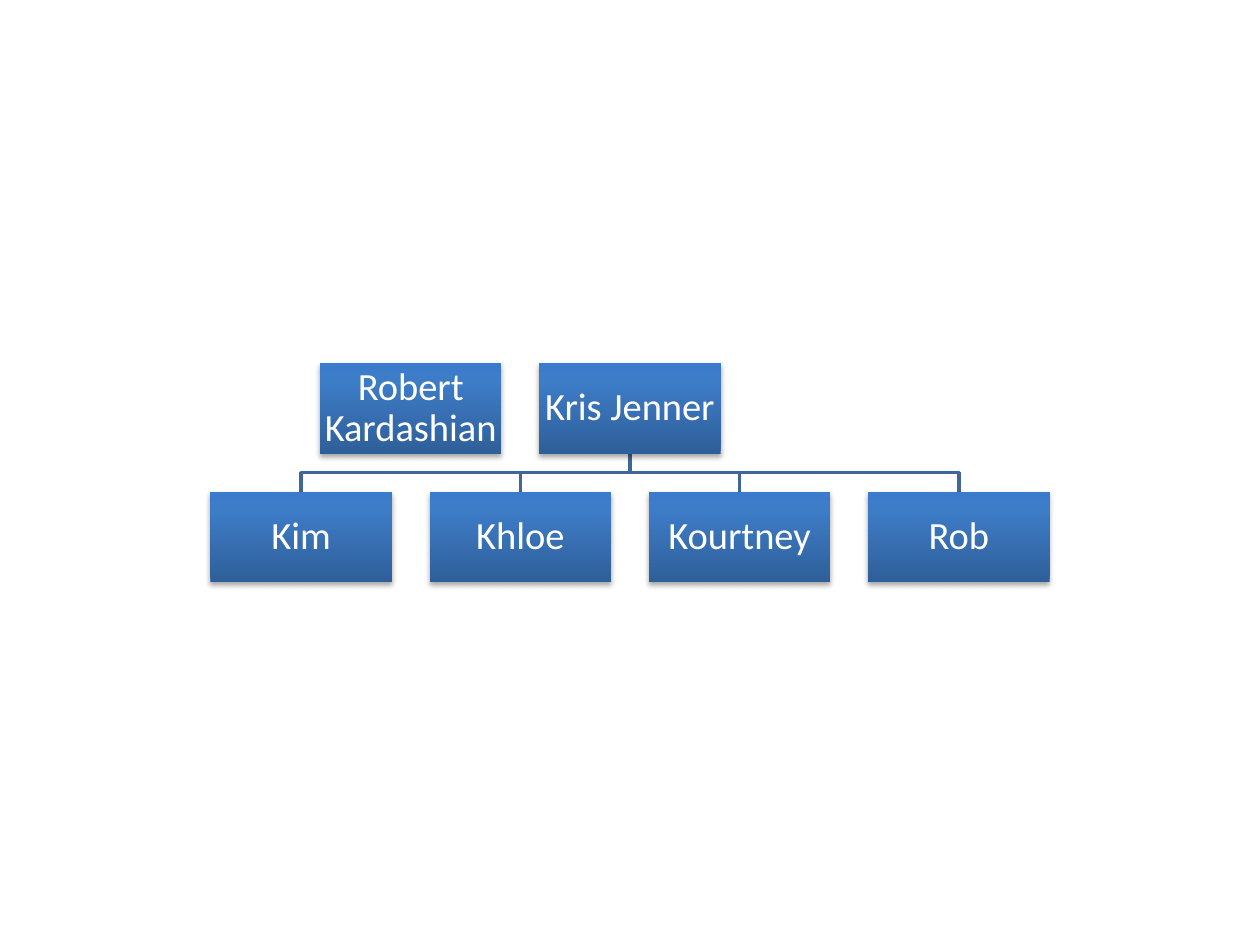
from copy import deepcopy

from lxml.etree import SubElement
from pptx import Presentation
from pptx.dml.color import RGBColor
from pptx.enum.shapes import MSO_SHAPE as Shape
from pptx.enum.text import MSO_ANCHOR as Anchor, PP_ALIGN as Align
from pptx.oxml.ns import qn
from pptx.util import Cm, Pt

PARENTS = ["Robert Kardashian", "Kris Jenner"]
CHILDREN = ["Kim", "Khloe", "Kourtney", "Rob"]
GRADIENT = [(0, "2F5F99"), (0.8, "3D7CC7"), (1, "3A7CCB")]
CARD_WIDTH, CARD_HEIGHT = Cm(3.66), Cm(1.83)
COLUMN_STEP, ROW_GAP = Cm(4.42), Cm(0.76)


def color(hex_code):
    return RGBColor.from_string(hex_code)


def fill_gradient(shape):
    shape.fill.gradient()
    shape.fill.gradient_angle = 90
    stop_list = shape.element.spPr.find(".//" + qn("a:gsLst"))
    stop_list.append(deepcopy(stop_list[-1]))
    for stop, (position, hex_code) in zip(shape.fill.gradient_stops, GRADIENT):
        stop.position = position
        stop.color.rgb = color(hex_code)


def add_shadow(shape):
    shape.shadow.inherit = False
    effects = shape.element.spPr.find(qn("a:effectLst"))
    shadow = SubElement(effects, qn("a:outerShdw"), blurRad=str(Pt(3.1)),
                        dist=str(Pt(1.8)), dir="5400000", rotWithShape="0")
    black = SubElement(shadow, qn("a:srgbClr"), val="000000")
    SubElement(black, qn("a:alpha"), val="35000")


def add_card(page, name, left, top):
    card = page.shapes.add_shape(Shape.RECTANGLE, left, top, CARD_WIDTH, CARD_HEIGHT)
    fill_gradient(card)
    card.line.fill.background()
    add_shadow(card)

    # Centred name
    frame = card.text_frame
    frame.text = name
    frame.word_wrap = True
    frame.vertical_anchor = Anchor.MIDDLE
    frame.margin_left = frame.margin_right = Cm(0.05)
    frame.margin_top = frame.margin_bottom = Cm(0.05)
    para = frame.paragraphs[0]
    para.alignment = Align.CENTER
    para.line_spacing = 0.9
    font = para.runs[0].font
    font.name, font.size = "Calibri", Pt(22)
    font.color.rgb = color("FFFFFF")


def add_branch(page, start_x, start_y, end_x):
    middle_y, end_y = start_y + ROW_GAP // 2, start_y + ROW_GAP
    builder = page.shapes.build_freeform(start_x, start_y)
    builder.add_line_segments(
        [(start_x, middle_y), (end_x, middle_y), (end_x, end_y)], close=False)
    branch = builder.convert_to_shape()
    branch.fill.background()
    branch.line.color.rgb = color("3F6797")
    branch.line.width = Pt(2)
    branch.shadow.inherit = False


def add_family_tree(page, left, top, width):
    center = left + width // 2
    parent_left = center - CARD_WIDTH // 2
    parent_bottom = top + CARD_HEIGHT
    child_lefts = [left + i * COLUMN_STEP for i in range(len(CHILDREN))]

    # Branches lie behind the cards
    for child_left in reversed(child_lefts):
        add_branch(page, center, parent_bottom, child_left + CARD_WIDTH // 2)

    # Parents, the second one centred over the children
    for i, name in enumerate(PARENTS):
        add_card(page, name, parent_left + (i - 1) * COLUMN_STEP, top)

    # Children
    for name, child_left in zip(CHILDREN, child_lefts):
        add_card(page, name, child_left, parent_bottom + ROW_GAP)


def main():
    deck = Presentation()
    deck.slide_width, deck.slide_height = Cm(25.4), Cm(19.05)
    page = deck.slides.add_slide(deck.slide_layouts[6])
    tree_width = (len(CHILDREN) - 1) * COLUMN_STEP + CARD_WIDTH
    add_family_tree(page, (deck.slide_width - tree_width) // 2, Cm(7.32), tree_width)
    deck.save("out.pptx")


if __name__ == "__main__":
    main()
